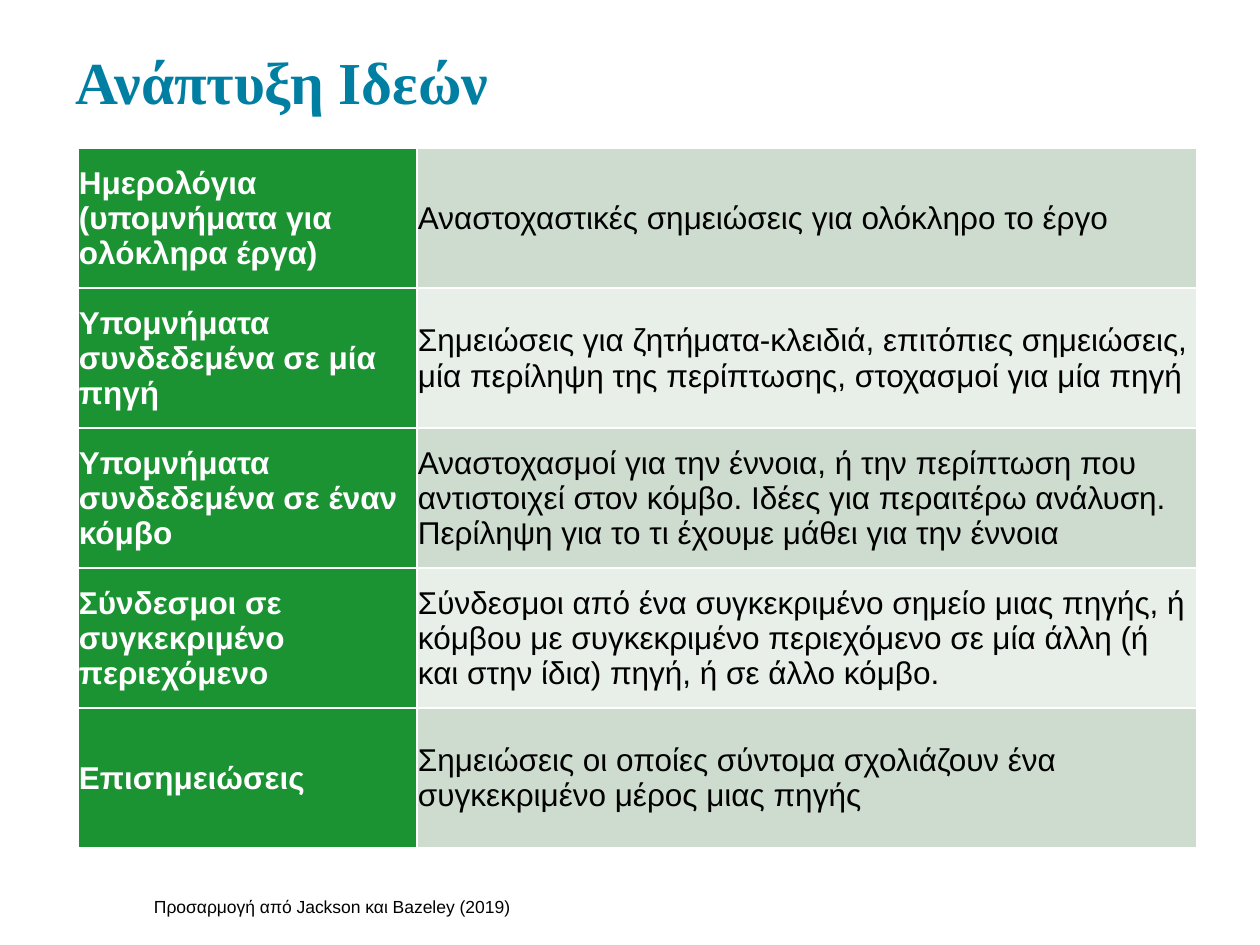
from lxml.etree import SubElement
from pptx import Presentation
from pptx.dml.color import RGBColor
from pptx.enum.text import MSO_ANCHOR, PP_ALIGN
from pptx.oxml.ns import qn
from pptx.util import Pt

SCALE = 914400 / 126  # EMU in one px
GREEN, WHITE, BLACK, TEAL = "1B9332", "FFFFFF", "000000", "007FA3"
BANDS = ["CDDCCE", "E8EEE8"]

ROWS = [
    ("Ημερολόγια (υπομνήματα για ολόκληρα έργα)",
     "Αναστοχαστικές σημειώσεις για ολόκληρο το έργο"),
    ("Υπομνήματα συνδεδεμένα σε μία πηγή",
     "Σημειώσεις για ζητήματα-κλειδιά, επιτόπιες σημειώσεις, "
     "μία περίληψη της περίπτωσης, στοχασμοί για μία πηγή"),
    ("Υπομνήματα συνδεδεμένα σε έναν κόμβο",
     "Αναστοχασμοί για την έννοια, ή την περίπτωση που αντιστοιχεί "
     "στον κόμβο. Ιδέες για περαιτέρω ανάλυση. "
     "Περίληψη για το τι έχουμε μάθει για την έννοια"),
    ("Σύνδεσμοι σε συγκεκριμένο περιεχόμενο",
     "Σύνδεσμοι από ένα συγκεκριμένο σημείο μιας πηγής, ή κόμβου με "
     "συγκεκριμένο περιεχόμενο σε μία άλλη (ή και στην ίδια) πηγή, "
     "ή σε άλλο κόμβο."),
    ("Επισημειώσεις",
     "Σημειώσεις οι οποίες σύντομα σχολιάζουν ένα "
     "συγκεκριμένο μέρος μιας πηγής"),
]


def px(n):
    return round(n * SCALE)


def color(code):
    return RGBColor.from_string(code)


def write(frame, text, size, code, bold=False, face="Arial"):
    par = frame.paragraphs[0]
    par.alignment = PP_ALIGN.LEFT
    par.space_before = Pt(0)
    run = par.add_run()
    run.text = text
    font = run.font
    font.name, font.size, font.bold = face, Pt(size), bold
    font.color.rgb = color(code)
    return par


def place(shape, box, anchor):
    shape.left, shape.top, shape.width, shape.height = map(px, box)
    frame = shape.text_frame
    frame.word_wrap = True
    frame.vertical_anchor = anchor
    frame.margin_left = frame.margin_right = px(13)
    frame.margin_top = frame.margin_bottom = px(13)
    return frame


def add_title(slide, box):
    frame = place(slide.shapes.title, box, MSO_ANCHOR.TOP)
    write(frame, "Ανάπτυξη Ιδεών", 34, TEAL, True, "Times New Roman")


def add_credit(slide, box):
    frame = place(slide.placeholders[1], box, MSO_ANCHOR.BOTTOM)
    par = write(frame, "Προσαρμογή από Jackson και Bazeley (2019)", 10, BLACK)
    # No bullet and no hanging indent
    props = par._p.get_or_add_pPr()
    props.set("marL", "0")
    props.set("indent", "0")
    SubElement(props, qn("a:buNone"))


def add_edges(cell):
    props = cell._tc.get_or_add_tcPr()
    for spot, side in enumerate(("lnL", "lnR", "lnT", "lnB")):
        line = props.makeelement(qn("a:" + side), {"w": str(Pt(1))})
        fill = SubElement(line, qn("a:solidFill"))
        SubElement(fill, qn("a:srgbClr"), val=WHITE)
        props.insert(spot, line)


def fill_cell(cell, text, back, code, bold):
    cell.fill.solid()
    cell.fill.fore_color.rgb = color(back)
    cell.vertical_anchor = MSO_ANCHOR.MIDDLE
    cell.margin_left = cell.margin_right = cell.margin_top = px(1)
    cell.margin_bottom = 0
    write(cell.text_frame, text, 18, code, bold)
    add_edges(cell)


def add_grid(slide, box, first):
    left, top, width, height = box
    table = slide.shapes.add_table(len(ROWS), 2, *map(px, box)).table
    table.columns[0].width = px(first)
    table.columns[1].width = px(width - first)
    for i, (term, note) in enumerate(ROWS):
        table.rows[i].height = px(height // len(ROWS))
        fill_cell(table.cell(i, 0), term, GREEN, WHITE, True)
        fill_cell(table.cell(i, 1), note, BANDS[i % 2], BLACK, False)


def main():
    deck = Presentation()
    deck.slide_width, deck.slide_height = px(1260), px(945)
    slide = deck.slides.add_slide(deck.slide_layouts[1])
    add_title(slide, (63, 32, 1134, 147))
    add_credit(slide, (141, 848, 1056, 82))
    add_grid(slide, (78, 148, 1119, 700), 339)
    deck.save("out.pptx")


if __name__ == "__main__":
    main()
